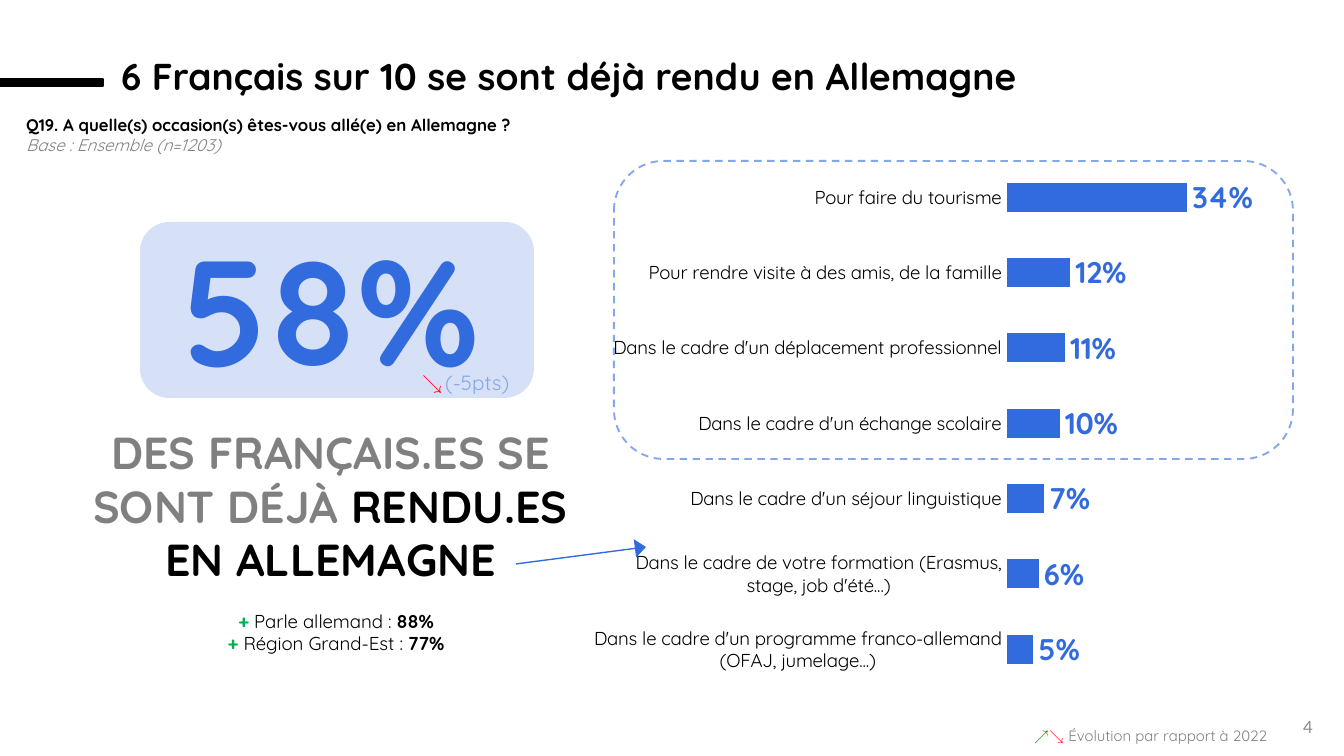
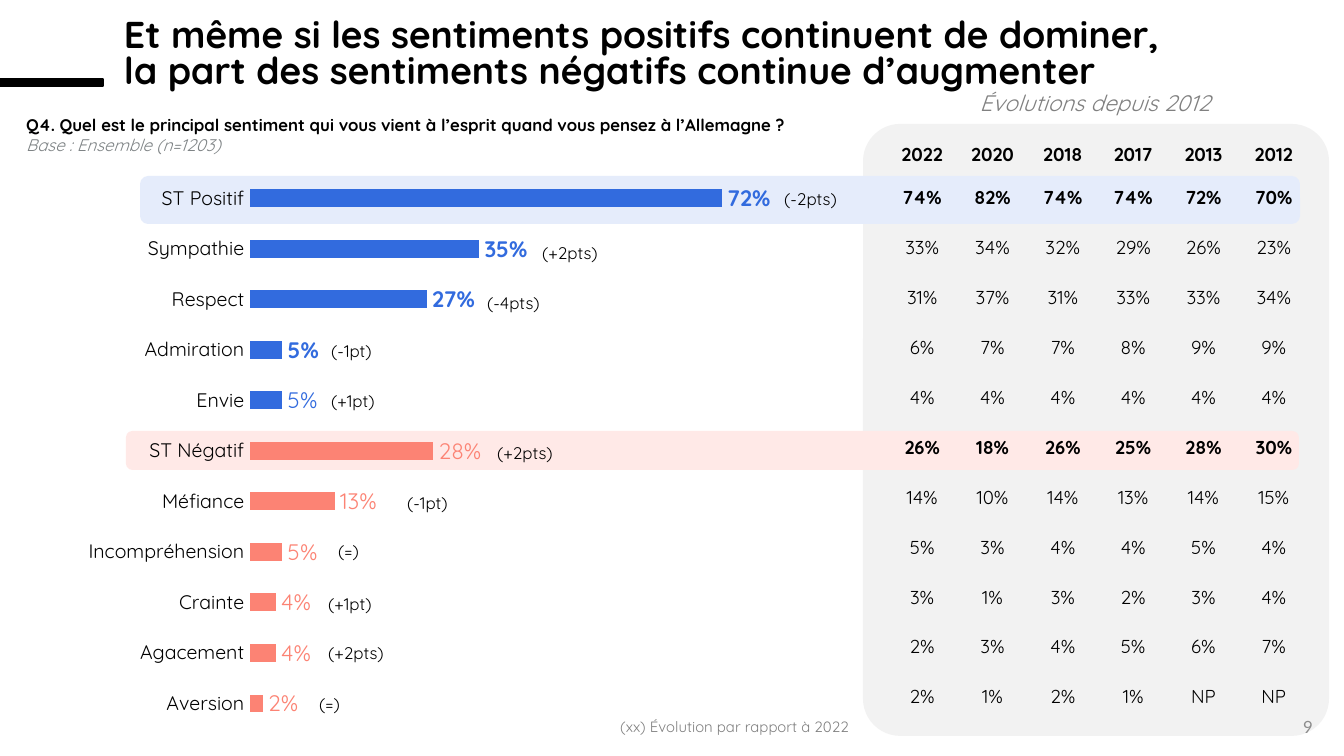
"""Build two survey slides about French people's ties to Germany."""
import dataclasses

import lxml.etree
import pptx
import pptx.chart.data
import pptx.dml.color
import pptx.enum.chart
import pptx.enum.dml
import pptx.enum.shapes
import pptx.enum.text
import pptx.oxml.ns
import pptx.util

PX = 914400 / 134.4
SHAPE = pptx.enum.shapes.MSO_SHAPE
ALIGN = pptx.enum.text.PP_ALIGN
ANCHOR = pptx.enum.text.MSO_ANCHOR
CHART = pptx.enum.chart
qn = pptx.oxml.ns.qn
NO_GRID = "{2D5ABB26-0587-4C30-8999-92F81FD0307C}"


@dataclasses.dataclass(frozen=True)
class Theme:
    font: str = "Quicksand"
    number_font: str = "Lato"
    black: str = "000000"
    blue: str = "326BDE"
    soft_blue: str = "84A6EB"
    pale_blue: str = "D6E1F8"
    positive_band: str = "E5ECFB"
    coral: str = "FC8374"
    negative_band: str = "FFE9E7"
    panel: str = "F2F2F2"
    grey: str = "808080"
    base_grey: str = "7E8385"
    number_grey: str = "8C8C8C"
    plus: str = "00B050"
    up: str = "008500"
    down: str = "FF0000"
    title: float = 20
    hero: float = 80
    claim: float = 24
    highlight: float = 16
    subtitle: float = 12
    change: float = 11
    sentiment: float = 10.5
    body: float = 10
    small: float = 9
    note: float = 8


T = Theme()

OCCASIONS = [
    ("Pour faire du tourisme", 0.34),
    ("Pour rendre visite à des amis, de la famille", 0.12),
    ("Dans le cadre d'un déplacement professionnel", 0.11),
    ("Dans le cadre d'un échange scolaire", 0.1),
    ("Dans le cadre d'un séjour linguistique", 0.07),
    ("Dans le cadre de votre formation (Erasmus, stage, job d'été...)", 0.06),
    ("Dans le cadre d'un programme franco-allemand (OFAJ, jumelage...)", 0.05),
]

SENTIMENTS = [
    ("ST Positif", 0.72, "(-2pts)", 771, 182),
    ("Sympathie", 0.35, "(+2pts)", 529, 236),
    ("Respect", 0.27, "(-4pts)", 474, 286),
    ("Admiration", 0.05, "(-1pt)", 318, 334),
    ("Envie", 0.05, "(+1pt)", 318, 384),
    ("ST Négatif", 0.28, "(+2pts)", 484, 436),
    ("Méfiance", 0.13, "(-1pt)", 394, 486),
    ("Incompréhension", 0.05, "(=)", 325, 534),
    ("Crainte", 0.04, "(+1pt)", 315, 587),
    ("Agacement", 0.04, "(+2pts)", 315, 636),
    ("Aversion", 0.02, "(=)", 306, 687),
]
FIRST_LIGHT_LABEL = 4
FIRST_NEGATIVE = 5

HISTORY = [line.split() for line in """\
2022 2020 2018 2017 2013 2012
74% 82% 74% 74% 72% 70%
33% 34% 32% 29% 26% 23%
31% 37% 31% 33% 33% 34%
6% 7% 7% 8% 9% 9%
4% 4% 4% 4% 4% 4%
26% 18% 26% 25% 28% 30%
14% 10% 14% 13% 14% 15%
5% 3% 4% 4% 5% 4%
3% 1% 3% 2% 3% 4%
2% 3% 4% 5% 6% 7%
2% 1% 2% 1% NP NP""".splitlines()]
BOLD_HISTORY_ROWS = (0, 1, 6)


def px(length):
    """Turn a length in px into EMU."""
    return pptx.util.Emu(round(length * PX))


def rgb(color):
    """Turn a hex string into a colour."""
    return pptx.dml.color.RGBColor.from_string(color)


def style_font(font, size, color, bold=False, italic=False, face=T.font):
    """Set the whole format of a font."""
    font.name = face
    font.size = pptx.util.Pt(size)
    font.bold = bold
    font.italic = italic
    font.color.rgb = rgb(color)


def write(frame, *paragraphs, align=ALIGN.LEFT, spacing=None, **look):
    """Write paragraphs, each a list of (text, format changes) runs or a string."""
    for index, runs in enumerate(paragraphs):
        paragraph = frame.add_paragraph() if index else frame.paragraphs[0]
        paragraph.alignment = align
        if spacing:
            paragraph.line_spacing = spacing
        for words, changes in [(runs, {})] if isinstance(runs, str) else runs:
            run = paragraph.add_run()
            run.text = words
            style_font(run.font, **{"color": T.black, **look, **changes})


def add_text(slide, box, *paragraphs, anchor=ANCHOR.TOP, inset=True, **look):
    """Add a wrapped text box."""
    frame = slide.shapes.add_textbox(*map(px, box)).text_frame
    frame.word_wrap = True
    frame.vertical_anchor = anchor
    if not inset:
        frame.margin_left = frame.margin_right = 0
        frame.margin_top = frame.margin_bottom = 0
    write(frame, *paragraphs, **look)


def add_block(slide, box, fill=None, line=None, width=0.75, dash=None,
              kind=SHAPE.ROUNDED_RECTANGLE, corner=None):
    """Add a flat shape with an optional fill and outline."""
    block = slide.shapes.add_shape(kind, *map(px, box))
    block.shadow.inherit = False
    if corner is not None:
        block.adjustments[0] = corner
    if fill:
        block.fill.solid()
        block.fill.fore_color.rgb = rgb(fill)
    else:
        block.fill.background()
    if line:
        block.line.color.rgb = rgb(line)
        block.line.width = pptx.util.Pt(width)
        block.line.dash_style = dash
    else:
        block.line.fill.background()


def add_arrow(slide, start, end, color):
    """Add a thin straight arrow."""
    arrow = slide.shapes.add_connector(
        pptx.enum.shapes.MSO_CONNECTOR.STRAIGHT, *map(px, start + end))
    arrow.line.color.rgb = rgb(color)
    arrow.line.width = pptx.util.Pt(0.75)
    lxml.etree.SubElement(arrow.line._get_or_add_ln(), qn("a:tailEnd"),
                          type="triangle", w="lg", len="med")
    lxml.etree.SubElement(arrow._element.spPr, qn("a:effectLst"))


def place_plot(chart, x, y, w, h):
    """Fix the inner plot area as fractions of the chart."""
    plot_area = chart._chartSpace.find(".//" + qn("c:plotArea"))
    layout = plot_area.find(qn("c:layout"))
    if layout is None:
        layout = lxml.etree.Element(qn("c:layout"))
        plot_area.insert(0, layout)
    manual = lxml.etree.SubElement(layout, qn("c:manualLayout"))
    settings = {"layoutTarget": "inner", "xMode": "edge", "yMode": "edge",
                "x": x, "y": y, "w": w, "h": h}
    for tag, value in settings.items():
        lxml.etree.SubElement(manual, qn("c:" + tag), val=str(value))


def add_bars(slide, box, rows, maximum, gap, plot_box, axis_size, label_size):
    """Add a horizontal bar chart in percent and return its series."""
    data = pptx.chart.data.CategoryChartData(number_format="0%")
    data.categories = [row[0] for row in rows]
    data.add_series("Series 1", [row[1] for row in rows])
    chart = slide.shapes.add_chart(
        CHART.XL_CHART_TYPE.BAR_CLUSTERED, *map(px, box), data).chart
    chart.has_legend = chart.has_title = False
    style_font(chart.font, T.body, T.black)
    place_plot(chart, *plot_box)

    categories = chart.category_axis
    categories.reverse_order = True
    categories.major_tick_mark = CHART.XL_TICK_MARK.NONE
    categories.format.line.fill.background()
    style_font(categories.tick_labels.font, axis_size, T.black)
    shares = chart.value_axis
    shares.minimum_scale, shares.maximum_scale = 0, maximum
    shares.has_major_gridlines = False
    shares.visible = False

    bars = chart.plots[0]
    bars.gap_width = gap
    bars.vary_by_categories = False
    series = bars.series[0]
    series.invert_if_negative = False
    series.format.fill.solid()
    series.format.fill.fore_color.rgb = rgb(T.blue)
    labels = series.data_labels
    labels.show_value = True
    labels.number_format = "0%"
    labels.number_format_is_linked = False
    labels.position = CHART.XL_LABEL_POSITION.OUTSIDE_END
    style_font(labels.font, label_size, T.blue, bold=True)
    return series


def add_history(slide, box, header_height):
    """Add the table of results of earlier years."""
    holder = slide.shapes.add_table(len(HISTORY), len(HISTORY[0]), *map(px, box))
    table = holder.table
    table.first_row = table.horz_banding = False
    holder._element.find(".//" + qn("a:tableStyleId")).text = NO_GRID
    for column in table.columns:
        column.width = px(box[2] / len(HISTORY[0]))
    for index, values in enumerate(HISTORY):
        table.rows[index].height = px(
            (box[3] - header_height) / (len(HISTORY) - 1) if index else header_height)
        for cell, value in zip(table.rows[index].cells, values):
            cell.fill.background()
            cell.vertical_anchor = ANCHOR.MIDDLE
            cell.margin_left = cell.margin_right = 0
            cell.margin_top = cell.margin_bottom = 0
            write(cell.text_frame, value, align=ALIGN.CENTER, size=T.body,
                  bold=index in BOLD_HISTORY_ROWS)


def add_heading(slide, title_box, title_lines, question, number):
    """Add the title, its bar, the question and the page number."""
    add_block(slide, (0, 79, 103, 7), T.black, T.black, kind=SHAPE.RECTANGLE)
    add_text(slide, title_box, *title_lines, size=T.title, bold=True,
             spacing=0.8, anchor=ANCHOR.BOTTOM, inset=False)
    add_text(slide, (13, 108, 1259, 54), [(question, {"bold": True})],
             [("Base : Ensemble (n=1203)", {"italic": True, "color": T.base_grey})],
             size=T.small)
    add_text(slide, (1024, 707, 302, 40), number, size=T.small, face=T.number_font,
             color=T.number_grey, align=ALIGN.RIGHT, anchor=ANCHOR.MIDDLE)


def build_visits(slide):
    """Build the slide on visits to Germany."""
    add_bars(slide, (594, 136, 735, 574), OCCASIONS, 0.6, 158,
             (0.561, 0.041, 0.434, 0.919), T.body, T.highlight)
    add_block(slide, (614, 161, 679, 298), line=T.soft_blue, width=1,
              dash=pptx.enum.dml.MSO_LINE.DASH)
    add_block(slide, (140, 222, 394, 176), T.pale_blue)
    add_text(slide, (140, 210, 382, 194), "58%", size=T.hero, color=T.blue, bold=True,
             align=ALIGN.CENTER, anchor=ANCHOR.MIDDLE)
    add_text(slide, (78, 418, 505, 287),
             [("DES FRANÇAIS.ES SE SONT DÉJÀ ", {"color": T.grey}),
              ("RENDU.ES EN ALLEMAGNE", {})],
             size=T.claim, bold=True, align=ALIGN.CENTER)
    add_text(slide, (432, 363, 102, 39), "(-5pts)", size=T.change, color=T.soft_blue)
    add_text(slide, (409, 363, 48, 39), "↘", size=T.change, color=T.down)
    profiles = [("Parle allemand : ", "88%"), ("Région Grand-Est : ", "77%")]
    add_text(slide, (203, 603, 266, 59),
             *[[("+ ", {"color": T.plus, "bold": True}), (group, {}),
                (share, {"bold": True})] for group, share in profiles],
             size=T.body, align=ALIGN.CENTER)
    add_heading(slide, (121, 62, 1220, 36),
                ["6 Français sur 10 se sont déjà rendu en Allemagne"],
                "Q19. A quelle(s) occasion(s) êtes-vous allé(e) en Allemagne ?", "4")
    add_text(slide, (1021, 720, 263, 32),
             [("↗", {"color": T.up}), ("↘ ", {"color": T.down}),
              ("Évolution par rapport à 2022", {})], size=T.note, color=T.grey)
    add_arrow(slide, (516, 564), (646, 547), T.blue)


def build_sentiments(slide):
    """Build the slide on feelings about Germany."""
    add_block(slide, (863, 124, 466, 612), T.panel, corner=0.08)
    add_block(slide, (126, 431, 1173, 39), T.negative_band)
    add_block(slide, (140, 176, 1160, 48), T.positive_band)
    series = add_bars(slide, (-48, 151, 954, 597), SENTIMENTS, 1, 182,
                      (0.312, 0.037, 0.688, 0.931), T.sentiment, T.subtitle)
    for index in range(FIRST_LIGHT_LABEL, len(SENTIMENTS)):
        point = series.points[index]
        color = T.coral if index >= FIRST_NEGATIVE else T.blue
        point.format.fill.solid()
        point.format.fill.fore_color.rgb = rgb(color)
        style_font(point.data_label.font, T.subtitle, color)
        point.data_label.position = CHART.XL_LABEL_POSITION.OUTSIDE_END
    add_history(slide, (887, 137, 422, 585), 36)
    add_heading(slide, (124, 19, 1220, 73),
                ["Et même si les sentiments positifs continuent de dominer,",
                 "la part des sentiments négatifs continue d’augmenter"],
                "Q4. Quel est le principal sentiment qui vous vient à l’esprit "
                "quand vous pensez à l’Allemagne ?", "9")
    add_text(slide, (863, 83, 464, 40), "Évolutions depuis 2012", size=T.subtitle,
             color=T.grey, italic=True, align=ALIGN.CENTER)
    for _, _, change, left, top in SENTIMENTS:
        add_text(slide, (left, top, 120, 34), change, size=T.small)
    add_text(slide, (607, 711, 280, 32), "(xx) Évolution par rapport à 2022",
             size=T.note, color=T.grey)


def main():
    """Build and save the presentation."""
    deck = pptx.Presentation()
    deck.slide_width, deck.slide_height = px(1344), px(756)
    for build in (build_visits, build_sentiments):
        build(deck.slides.add_slide(deck.slide_layouts[6]))
    deck.save("out.pptx")


if __name__ == "__main__":
    main()
